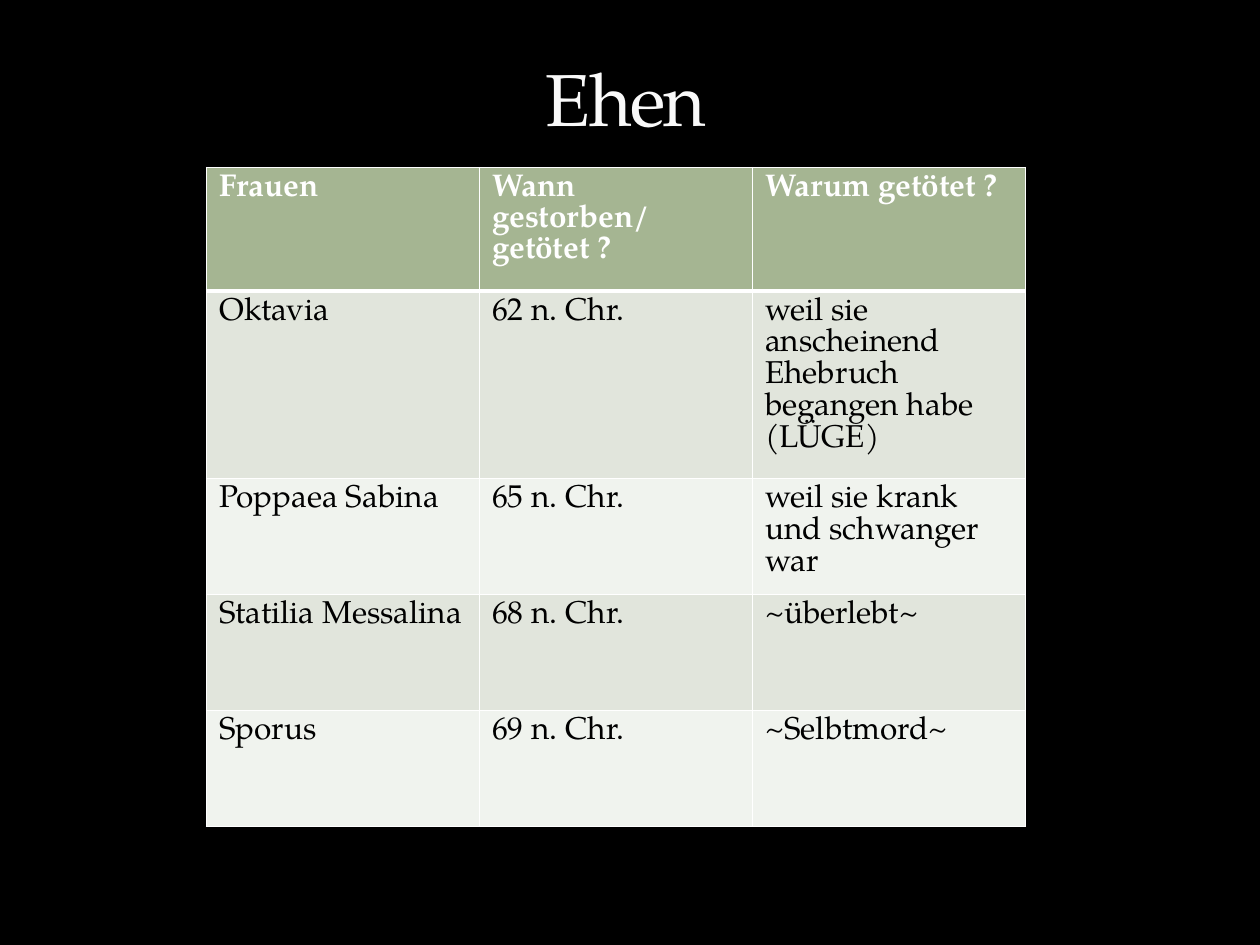
from lxml import etree
from pptx import Presentation
from pptx.dml.color import RGBColor
from pptx.enum.text import MSO_ANCHOR, PP_ALIGN
from pptx.oxml import parse_xml
from pptx.oxml.ns import qn
from pptx.util import Inches, Pt

BOTTOM = MSO_ANCHOR.BOTTOM
CENTER = PP_ALIGN.CENTER
FONT = "TeX Gyre Pagella"
NS = "http://schemas.openxmlformats.org/drawingml/2006/main"
HEAD, DARK, LIGHT = "A5B592", "E1E5DC", "F0F3EE"


def paint(fill, color):
    fill.solid()
    fill.fore_color.rgb = RGBColor.from_string(color)


def style(run, size, color, bold=False):
    run.font.name = FONT
    run.font.size = Pt(size)
    run.font.bold = bold
    paint(run.font.fill, color)


prs = Presentation()
prs.slide_width, prs.slide_height = Inches(10), Inches(7.5)
slide = prs.slides.add_slide(prs.slide_layouts[5])
paint(slide.background.fill, "000000")

# Table
rows = [
    ("Frauen", "Wann gestorben/\ngetötet ?", "Warum getötet ?"),
    ("Oktavia", "62 n. Chr.", "weil sie anscheinend Ehebruch begangen habe (LÜGE)"),
    ("Poppaea Sabina", "65 n. Chr.", "weil sie krank und schwanger war"),
    ("Statilia Messalina", "68 n. Chr.", "~überlebt~"),
    ("Sporus", "69 n. Chr.", "~Selbtmord~"),
]
heights = [0.98, 1.49, 0.92, 0.92, 0.92]
table = slide.shapes.add_table(
    len(rows), 3, Inches(1.64), Inches(1.33), Inches(6.5), Inches(sum(heights))
).table
for col in table.columns:
    col.width = Inches(6.5 / 3)

for i, (row, height) in enumerate(zip(rows, heights)):
    table.rows[i].height = Inches(height)
    for j, text in enumerate(row):
        cell = table.cell(i, j)
        props = cell._tc.get_or_add_tcPr()
        for side in ("L", "R", "T", "B"):
            thick = (i, side) in ((0, "B"), (1, "T"))
            line = etree.SubElement(props, qn("a:ln" + side), w=str(Pt(3 if thick else 1)))
            solid = etree.SubElement(line, qn("a:solidFill"))
            etree.SubElement(solid, qn("a:srgbClr"), val="FFFFFF")
        paint(cell.fill, HEAD if i == 0 else DARK if i % 2 else LIGHT)
        para = cell.text_frame.paragraphs[0]
        para.text = text
        for run in para.runs:
            style(run, 18, "000000" if i else "FFFFFF", i == 0)

# Title
title = slide.shapes.title
title.left, title.top = Inches(0.47), Inches(-0.16)
title.width, title.height = Inches(9), Inches(1.33)
frame = title.text_frame
frame.text = "Ehen"
frame.vertical_anchor = BOTTOM
para = frame.paragraphs[0]
para.alignment = CENTER
run = para.runs[0]
style(run, 42, "F9F9F9")
props = run.font._element
props.set("spc", "-100")
props.insert(0, parse_xml(
    f'<a:ln xmlns:a="{NS}" w="{Pt(0.25)}"><a:solidFill><a:srgbClr val="3C4422">'
    '<a:alpha val="25000"/></a:srgbClr></a:solidFill></a:ln>'
))

prs.save("out.pptx")
